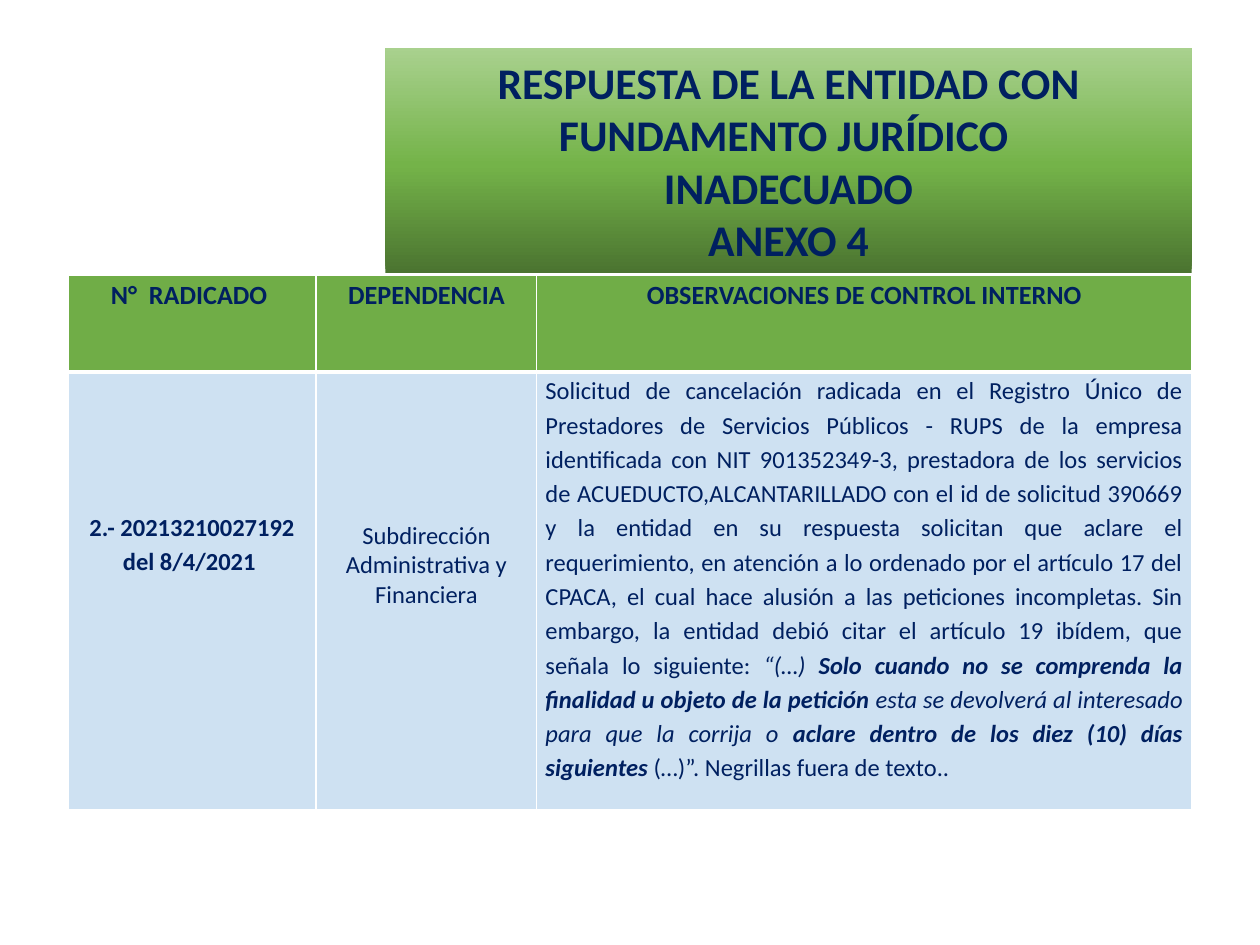
import copy
from dataclasses import dataclass

import lxml.etree
import pptx
import pptx.dml.color
import pptx.enum.shapes
import pptx.enum.text
import pptx.oxml.ns
import pptx.util

Pt = pptx.util.Pt
RGB = pptx.dml.color.RGBColor.from_string
ALIGN = pptx.enum.text.PP_ALIGN
qn = pptx.oxml.ns.qn


@dataclass(frozen=True)
class Theme:
    font: str = "Calibri"
    ink: str = "002060"
    header: str = "70AD47"
    body: str = "BDD7EE"
    body_alpha: int = 73
    border: str = "FFFFFF"
    gradient: tuple = ((0, "4B7430"), (0.48, "74B349"), (1, "A9D18E"))
    title_size: int = 25
    header_size: int = 15
    body_size: int = 14


theme = Theme()


def add_run(paragraph, text, size, bold=False, italic=False):
    run = paragraph.add_run()
    run.text = text
    run.font.name = theme.font
    run.font.size = Pt(size)
    run.font.bold = bold
    run.font.italic = italic
    run.font.color.rgb = RGB(theme.ink)


def set_borders(cell, bottom_width):
    widths = {"a:lnL": 1, "a:lnR": 1, "a:lnT": 1, "a:lnB": bottom_width}
    properties = cell._tc.get_or_add_tcPr()
    for position, (side, width) in enumerate(widths.items()):
        line = lxml.etree.Element(qn(side), w=str(Pt(width)))
        solid = lxml.etree.SubElement(line, qn("a:solidFill"))
        lxml.etree.SubElement(solid, qn("a:srgbClr"), val=theme.border)
        properties.insert(position, line)


presentation = pptx.Presentation()
presentation.slide_width = Pt(720)
presentation.slide_height = Pt(540)
slide = presentation.slides.add_slide(presentation.slide_layouts[6])

# Title banner with a three-stop vertical gradient
banner = slide.shapes.add_shape(
    pptx.enum.shapes.MSO_SHAPE.RECTANGLE, Pt(220.2), Pt(27.4), Pt(460.8), Pt(128.4))
banner.shadow.inherit = False
banner.line.fill.background()
banner.fill.gradient()
banner.fill.gradient_angle = 90
first_stop = banner.fill._xPr.find(".//" + qn("a:gs"))
first_stop.addnext(copy.deepcopy(first_stop))
for stop, (position, color) in zip(banner.fill.gradient_stops, theme.gradient):
    stop.position = position
    stop.color.rgb = RGB(color)

title = banner.text_frame
title.word_wrap = True
title_lines = ["RESPUESTA DE LA ENTIDAD CON FUNDAMENTO JURÍDICO ", "INADECUADO", "ANEXO 4"]
for index, line in enumerate(title_lines):
    paragraph = title.add_paragraph() if index else title.paragraphs[0]
    paragraph.alignment = ALIGN.CENTER
    add_run(paragraph, line, theme.title_size, bold=True)

# Table content
headings = ["N°  RADICADO ", "DEPENDENCIA", "OBSERVACIONES DE CONTROL INTERNO"]
observation = [
    ("Solicitud de cancelación radicada en el Registro Único de Prestadores de "
     "Servicios Públicos - RUPS de la empresa identificada con NIT 901352349-3, "
     "prestadora de los servicios de ACUEDUCTO,ALCANTARILLADO con el id de solicitud "
     "390669 y la entidad en su respuesta solicitan que aclare el requerimiento, en "
     "atención a lo ordenado por el artículo 17 del CPACA, el cual hace alusión a las "
     "peticiones incompletas. Sin embargo, la entidad debió citar el artículo 19 "
     "ibídem, que señala lo siguiente: ", False, False),
    ("“(…) ", False, True),
    ("Solo cuando no se comprenda la finalidad u objeto de la petición", True, True),
    (" esta se devolverá al interesado para que la corrija o ", False, True),
    ("aclare dentro de los diez (10) días siguientes ", True, True),
    ("(…)”. Negrillas fuera de texto..", False, False),
]
# Each body cell: paragraphs of runs, alignment, line spacing, top margin
body_cells = [
    ([[("2.- 20213210027192", True, False)], [("del 8/4/2021 ", True, False)]],
     ALIGN.CENTER, 1.15, 78),
    ([[("Subdirección Administrativa y Financiera", False, False)]],
     ALIGN.CENTER, 1, 85),
    ([observation], ALIGN.JUSTIFY, 1.15, 0),
]
header_cells = [([[(text, True, False)]], ALIGN.CENTER, 1.15, 0) for text in headings]

# Table grid
column_widths = [141.8, 126, 374.4]
row_heights = [55.4, 250]
table = slide.shapes.add_table(
    2, 3, Pt(38.9), Pt(157.2), Pt(sum(column_widths)), Pt(sum(row_heights))).table
for column, width in zip(table.columns, column_widths):
    column.width = Pt(width)
for row, height in zip(table.rows, row_heights):
    row.height = Pt(height)

# Header and body rows
row_styles = [
    (header_cells, theme.header, theme.header_size, 3),
    (body_cells, theme.body, theme.body_size, 1),
]
for row, (contents, color, size, bottom_width) in zip(table.rows, row_styles):
    for cell, (paragraphs, alignment, spacing, top) in zip(row.cells, contents):
        cell.fill.solid()
        cell.fill.fore_color.rgb = RGB(color)
        if color == theme.body:
            tint = cell._tc.tcPr.find(".//" + qn("a:srgbClr"))
            lxml.etree.SubElement(tint, qn("a:alpha"), val=str(theme.body_alpha * 1000))
        set_borders(cell, bottom_width)
        cell.margin_left = cell.margin_right = Pt(5)
        cell.margin_top, cell.margin_bottom = Pt(top), Pt(0)
        for index, runs in enumerate(paragraphs):
            frame = cell.text_frame
            paragraph = frame.add_paragraph() if index else frame.paragraphs[0]
            paragraph.alignment = alignment
            paragraph.line_spacing = spacing
            for text, bold, italic in runs:
                add_run(paragraph, text, size, bold, italic)

presentation.save("out.pptx")
